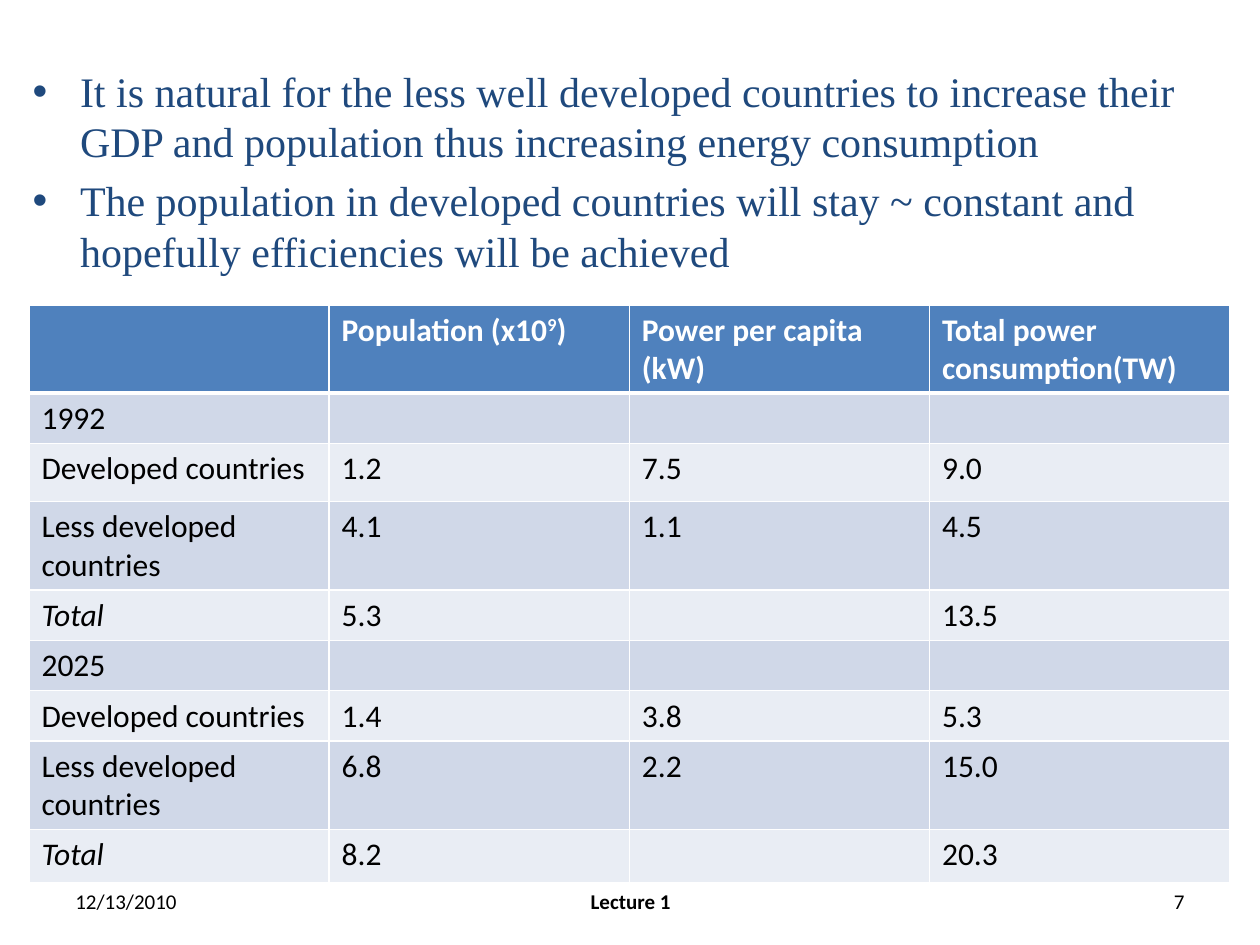
from lxml.etree import SubElement
from pptx import Presentation
from pptx.dml.color import RGBColor as RGB
from pptx.enum.text import MSO_ANCHOR as Anchor, PP_ALIGN as Align
from pptx.oxml.ns import qn
from pptx.util import Inches, Pt

THEME = {
    "white": RGB.from_string("FFFFFF"),
    "black": RGB.from_string("000000"),
    "navy": RGB.from_string("1F497D"),
    "header": RGB.from_string("4F81BD"),
    "bands": [RGB.from_string("D0D8E8"), RGB.from_string("E9EDF4")],
    "serif": "Times New Roman",
    "sans": "Calibri",
    "body_size": 24,
    "table_size": 18,
    "footer_size": 12,
}


def set_font(paragraph, name, size, color, bold=False, italic=False):
    font = paragraph.font
    font.name, font.size, font.bold, font.italic = name, Pt(size), bold, italic
    font.color.rgb = color


def set_borders(cell, bottom):
    properties = cell._tc.get_or_add_tcPr()
    widths = {"a:lnL": 1, "a:lnR": 1, "a:lnT": 1, "a:lnB": bottom}
    for position, (tag, width) in enumerate(widths.items()):
        line = SubElement(properties, qn(tag), w=str(Pt(width)))
        fill = SubElement(line, qn("a:solidFill"))
        SubElement(fill, qn("a:srgbClr"), val=str(THEME["white"]))
        properties.insert(position, line)


presentation = Presentation()
presentation.slide_width, presentation.slide_height = Inches(10), Inches(7.5)
slide = presentation.slides.add_slide(presentation.slide_layouts[1])
title = slide.shapes.title
title._element.getparent().remove(title._element)

# Bulleted statements
body = slide.placeholders[1]
body.left, body.top = Inches(0.16), Inches(0.47)
body.width, body.height = Inches(9.31), Inches(6.23)
body.fill.solid()
body.fill.fore_color.rgb = THEME["white"]
body.text_frame.text = (
    "It is natural for the less well developed countries to increase their "
    "GDP and population thus increasing energy consumption\n"
    "The population in developed countries will stay ~ constant and "
    "hopefully efficiencies will be achieved"
)
for paragraph in body.text_frame.paragraphs:
    set_font(paragraph, THEME["serif"], THEME["body_size"], THEME["navy"])

# Footer: date, lecture, slide number
footers = [
    (0.5, 2.33, "12/13/2010", Align.LEFT, False),
    (3.42, 3.17, "Lecture 1", Align.CENTER, True),
    (7.17, 2.33, "7", Align.RIGHT, False),
]
for left, width, text, alignment, bold in footers:
    box = slide.shapes.add_textbox(Inches(left), Inches(6.95), Inches(width), Inches(0.4))
    frame = box.text_frame
    frame.word_wrap = True
    frame.vertical_anchor = Anchor.MIDDLE
    frame.text = text
    frame.paragraphs[0].alignment = alignment
    set_font(frame.paragraphs[0], THEME["sans"], THEME["footer_size"], THEME["black"], bold)

# Energy table
rows = [
    ["", "Population (x10^9^)", "Power per capita (kW)", "Total power consumption(TW)"],
    ["1992", "", "", ""],
    ["Developed countries", "1.2", "7.5", "9.0"],
    ["Less developed countries", "4.1", "1.1", "4.5"],
    ["Total", "5.3", "", "13.5"],
    ["2025", "", "", ""],
    ["Developed countries", "1.4", "3.8", "5.3"],
    ["Less developed countries", "6.8", "2.2", "15.0"],
    ["Total", "8.2", "", "20.3"],
]
row_heights = [0.7, 0.38, 0.46, 0.62, 0.38, 0.38, 0.4, 0.68, 0.42]
table = slide.shapes.add_table(
    len(rows), len(rows[0]), Inches(0.23), Inches(2.42), Inches(9.53), Inches(sum(row_heights))
).table
for row_index, (values, height) in enumerate(zip(rows, row_heights)):
    table.rows[row_index].height = Inches(height)
    is_header = row_index == 0
    for column_index, value in enumerate(values):
        cell = table.cell(row_index, column_index)
        cell.fill.solid()
        cell.fill.fore_color.rgb = THEME["header"] if is_header else THEME["bands"][(row_index - 1) % 2]
        set_borders(cell, bottom=3 if is_header else 1)
        paragraph = cell.text_frame.paragraphs[0]
        set_font(paragraph, THEME["sans"], THEME["table_size"],
                 THEME["white"] if is_header else THEME["black"],
                 bold=is_header, italic=value == "Total")
        # Text between carets is raised
        for part_index, part in enumerate(value.split("^") if value else []):
            run = paragraph.add_run()
            run.text = part
            if part_index % 2:
                run.font._element.set("baseline", "30000")

presentation.save("out.pptx")
